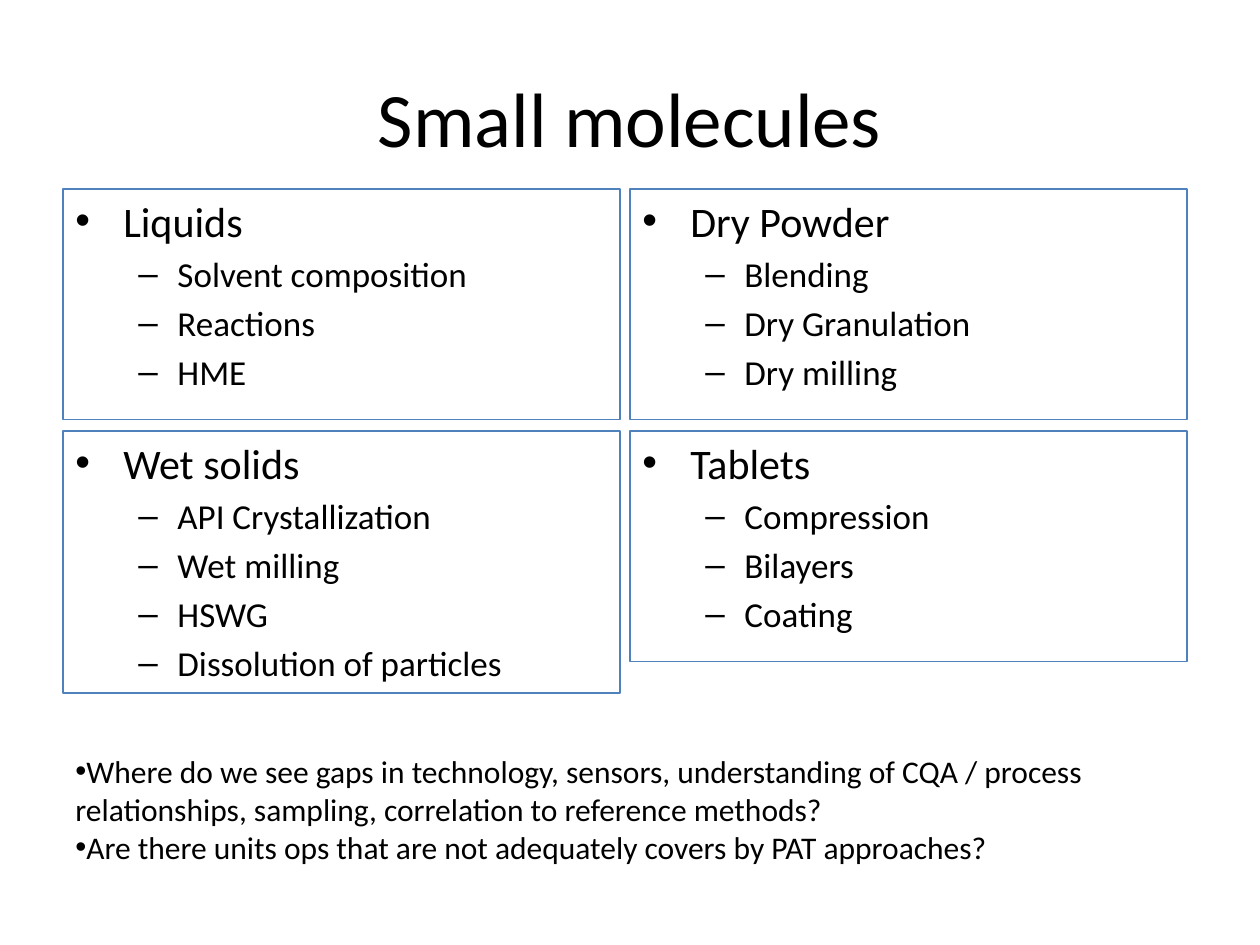
from dataclasses import dataclass

from lxml import etree
from pptx import Presentation
from pptx import util as u
from pptx.dml.color import RGBColor
from pptx.enum import shapes, text
from pptx.oxml.ns import qn


@dataclass(frozen=True)
class Theme:
    font: str = "Calibri"
    ink: RGBColor = RGBColor(0, 0, 0)
    border: RGBColor = RGBColor(0x4F, 0x81, 0xBD)
    border_width: float = 0.75
    title_size: int = 44
    heading_size: int = 24
    item_size: int = 20
    question_size: int = 18


@dataclass(frozen=True)
class Panel:
    heading: str
    items: tuple[str, ...]
    height: float = 1.83


THEME = Theme()
LEFT, TOP = 0.5, 1.5
PANEL_WIDTH = 4.42
COLUMN_STEP, ROW_STEP = 4.5, 1.92

PANELS = (
    Panel("Liquids", ("Solvent composition", "Reactions", "HME")),
    Panel("Dry Powder", ("Blending", "Dry Granulation", "Dry milling")),
    Panel("Wet solids", ("API Crystallization", "Wet milling", "HSWG",
                         "Dissolution of particles"), height=2.08),
    Panel("Tablets", ("Compression", "Bilayers", "Coating")),
)
QUESTIONS = (
    "Where do we see gaps in technology, sensors, understanding of CQA / process "
    "relationships, sampling, correlation to reference methods?",
    "Are there units ops that are not adequately covers by PAT approaches?",
)


def write(frame, wording: str, *, size: int, align=text.PP_ALIGN.LEFT, level: int = 0,
          bullet: str = "", margin: float = 0, indent: float = 0,
          before_percent: int = 0) -> None:
    """Add a paragraph, using the frame's first one while it is still empty."""
    first = frame.paragraphs[0]
    paragraph = frame.add_paragraph() if first.runs else first
    paragraph.alignment = align
    paragraph.level = level
    run = paragraph.add_run()
    run.text = wording
    run.font.name = THEME.font
    run.font.size = u.Pt(size)
    run.font.color.rgb = THEME.ink

    properties = paragraph._p.get_or_add_pPr()
    properties.set("marL", str(u.Inches(margin)))
    properties.set("indent", str(u.Inches(indent)))
    if before_percent:
        before = etree.SubElement(properties, qn("a:spcBef"))
        etree.SubElement(before, qn("a:spcPct"), val=str(before_percent * 1000))
    if bullet:
        etree.SubElement(properties, qn("a:buFont"), typeface="Arial")
        etree.SubElement(properties, qn("a:buChar"), char=bullet)


def add_title(slide, wording: str) -> None:
    title = slide.shapes.title
    title.left, title.top = u.Inches(LEFT), u.Inches(0.3)
    title.width, title.height = u.Inches(9), u.Inches(1.25)
    title.text_frame.vertical_anchor = text.MSO_ANCHOR.MIDDLE
    write(title.text_frame, wording, size=THEME.title_size, align=text.PP_ALIGN.CENTER)


def add_panel(slide, panel: Panel, left: float, top: float) -> None:
    box = slide.shapes.add_shape(
        shapes.MSO_SHAPE.RECTANGLE, u.Inches(left), u.Inches(top),
        u.Inches(PANEL_WIDTH), u.Inches(panel.height))
    box.shadow.inherit = False
    box.fill.background()
    box.line.color.rgb = THEME.border
    box.line.width = u.Pt(THEME.border_width)
    frame = box.text_frame
    frame.word_wrap = True
    frame.vertical_anchor = text.MSO_ANCHOR.TOP
    write(frame, panel.heading, size=THEME.heading_size, bullet="•",
          margin=0.38, indent=-0.38, before_percent=20)
    for item in panel.items:
        write(frame, item, size=THEME.item_size, level=1, bullet="–",
              margin=0.81, indent=-0.31, before_percent=20)


def add_questions(slide, questions: tuple[str, ...]) -> None:
    box = slide.shapes.add_textbox(
        u.Inches(LEFT), u.Inches(5.92), u.Inches(COLUMN_STEP + PANEL_WIDTH), u.Inches(1.31))
    box.text_frame.word_wrap = True
    for question in questions:
        write(box.text_frame, question, size=THEME.question_size, bullet="•")


def main() -> None:
    deck = Presentation()
    deck.slide_width, deck.slide_height = u.Inches(10), u.Inches(7.5)
    slide = deck.slides.add_slide(deck.slide_layouts[5])
    add_title(slide, "Small molecules")
    for index, panel in enumerate(PANELS):
        row, column = divmod(index, 2)
        add_panel(slide, panel, LEFT + column * COLUMN_STEP, TOP + row * ROW_STEP)
    add_questions(slide, QUESTIONS)
    deck.save("out.pptx")


if __name__ == "__main__":
    main()
